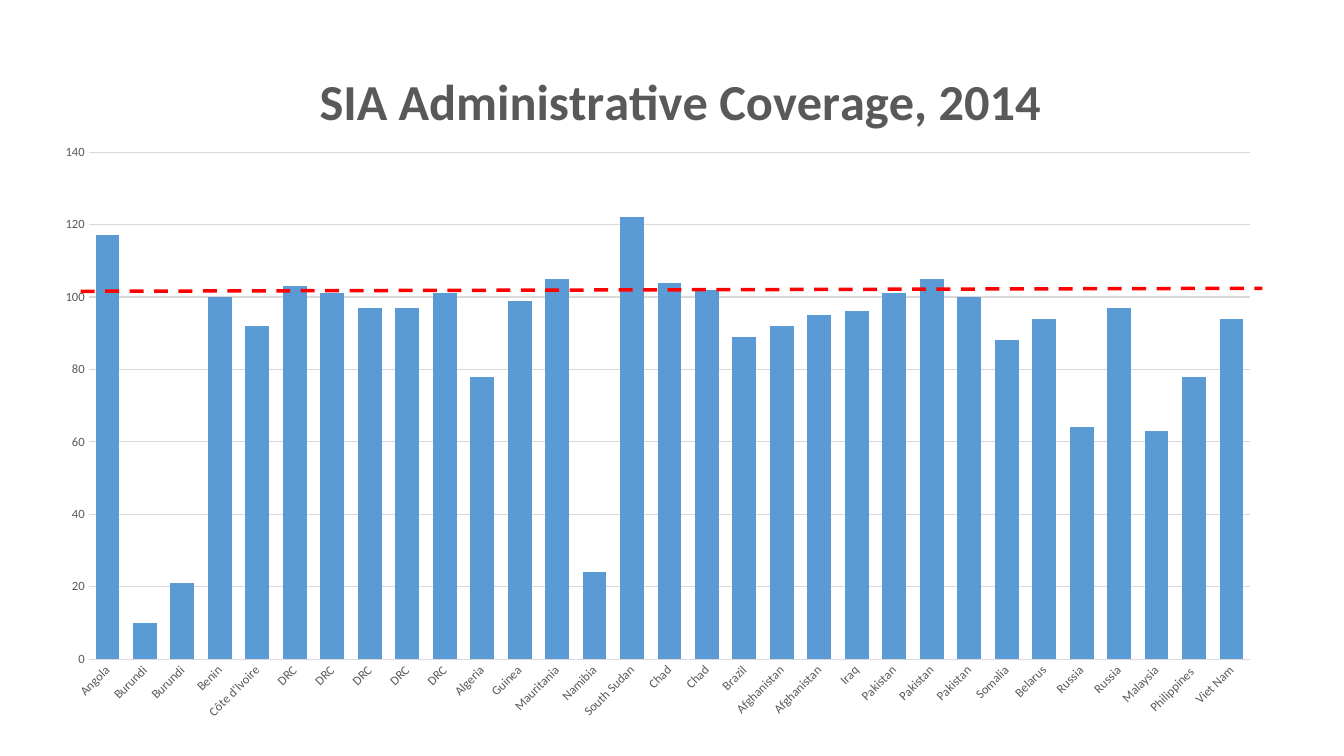
from pptx import Presentation
from pptx.chart import data
from pptx.dml.color import RGBColor
from pptx.enum import chart as ch, dml
from pptx.oxml import parse_xml
from pptx.oxml.ns import nsdecls, qn
from pptx.util import Inches, Pt

BLUE = RGBColor(0x5B, 0x9B, 0xD5)
GRAY = RGBColor(0x59, 0x59, 0x59)
PALE = RGBColor(0xD9, 0xD9, 0xD9)
RED = RGBColor(0xFF, 0x00, 0x00)
BLACK = RGBColor(0, 0, 0)

COVERAGE = [
    ("Angola", 117), ("Burundi", 10), ("Burundi", 21), ("Benin", 100),
    ("Côte d'Ivoire", 92), ("DRC", 103), ("DRC", 101), ("DRC", 97),
    ("DRC", 97), ("DRC", 101), ("Algeria", 78), ("Guinea", 99),
    ("Mauritania", 105), ("Namibia", 24), ("South Sudan", 122),
    ("Chad", 104), ("Chad", 102), ("Brazil", 89), ("Afghanistan", 92),
    ("Afghanistan", 95), ("Iraq", 96), ("Pakistan", 101),
    ("Pakistan", 105), ("Pakistan", 100), ("Somalia", 88),
    ("Belarus", 94), ("Russia", 64), ("Russia", 97), ("Malaysia", 63),
    ("Philippines ", 78), ("Viet Nam", 94),
]


def style(font, size, color, bold=False):
    values = {"name": "Calibri", "size": Pt(size), "bold": bold}
    for key, value in values.items():
        setattr(font, key, value)
    font.color.rgb = color


def rule(line, color, width):
    line.color.rgb = color
    line.width = Pt(width)


def arrange(part, index, inner=False, **place):
    """Fix a chart part's place, in inches from the chart's corner."""
    for old in part.findall(qn("c:layout")):
        part.remove(old)
    tags = '<c:layoutTarget val="inner"/>' if inner else ""
    tags += "".join(f'<c:{k}Mode val="edge"/>' for k in "xy")
    tags += "".join(f'<c:{k} val="{v:.4f}"/>' for k, v in place.items())
    part.insert(index, parse_xml(
        f'<c:layout {nsdecls("c")}><c:manualLayout>{tags}'
        '</c:manualLayout></c:layout>'))


def add_title(chart, wide, high):
    chart.has_title = True
    title = chart.chart_title
    title.include_in_layout = False
    para = title.text_frame.paragraphs[0]
    run = para.add_run()
    run.text = "SIA Administrative Coverage, 2014"
    style(run.font, 36, GRAY, True)
    arrange(title._element, 1, x=2.67 / wide, y=0.18 / high)


def format_axes(chart):
    for axis in (chart.category_axis, chart.value_axis):
        axis.major_tick_mark = axis.minor_tick_mark = ch.XL_TICK_MARK.NONE
        style(axis.tick_labels.font, 9, GRAY)
    names, scale = chart.category_axis, chart.value_axis
    rule(names.format.line, PALE, 0.75)
    names._element.find(".//" + qn("a:bodyPr")).set("rot", "-2700000")
    scale.format.line.fill.background()
    rule(scale.major_gridlines.format.line, PALE, 0.75)
    limits = {"minimum_scale": 0, "maximum_scale": 140, "major_unit": 20}
    for key, value in limits.items():
        setattr(scale, key, value)


def add_coverage(slide, left, top, wide, high):
    names, values = zip(*COVERAGE)
    table = data.CategoryChartData()
    table.categories = names
    table.add_series("Series 1", values)
    box = [Inches(v) for v in (left, top, wide, high)]
    chart = slide.shapes.add_chart(
        ch.XL_CHART_TYPE.COLUMN_CLUSTERED, *box, table).chart
    style(chart.font, 10, BLACK)
    chart.has_legend = False
    add_title(chart, wide, high)
    format_axes(chart)
    plot = chart.plots[0]
    for key, value in {"gap_width": 57, "overlap": -27,
                       "vary_by_categories": False}.items():
        setattr(plot, key, value)
    fill = plot.series[0].format.fill
    fill.solid()
    fill.fore_color.rgb = BLUE
    area = chart._chartSpace.chart.plotArea
    arrange(area, 0, True, x=0.47 / wide, y=1.12 / high,
            w=11.52 / wide, h=5.03 / high)


def add_target(slide, left, top, wide, rise):
    """Dashed line that marks the target level across the columns."""
    ends = [Inches(v) for v in (left, top, left + wide, top - rise)]
    mark = slide.shapes.add_connector(1, *ends)
    rule(mark.line, RED, 2.5)
    mark.line.dash_style = dml.MSO_LINE.DASH
    mark._element.spPr.append(parse_xml(f'<a:effectLst {nsdecls("a")}/>'))


def main():
    deck = Presentation()
    deck.slide_width, deck.slide_height = Inches(13.33), Inches(7.5)
    slide = deck.slides.add_slide(deck.slide_layouts[6])
    add_coverage(slide, 0.41, 0.39, 12.24, 6.88)
    add_target(slide, 0.8, 2.89, 11.72, 0.03)
    deck.save("out.pptx")


if __name__ == "__main__":
    main()
